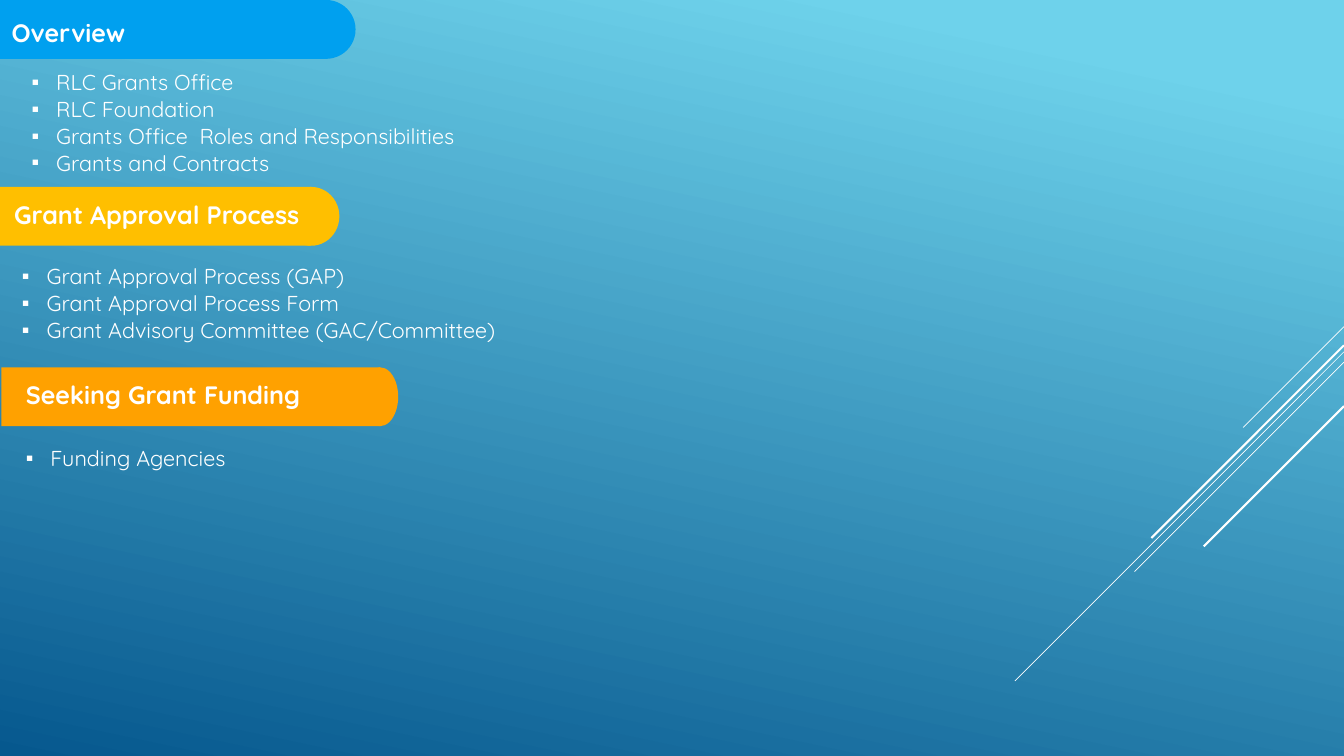
from pptx import Presentation
from pptx.dml.color import RGBColor
from pptx.enum.shapes import MSO_CONNECTOR, MSO_SHAPE
from pptx.enum.text import MSO_ANCHOR, MSO_AUTO_SIZE, PP_ALIGN
from pptx.oxml.xmlchemy import OxmlElement
from pptx.util import Inches, Pt

FONT = "Quicksand"
SLIDE_W, SLIDE_H = 20.79, 11.69
PILL_H = 0.91
COLORS = {
    "sky": "6ED2EB",
    "deep": "06588E",
    "white": "FFFFFF",
    "blue": "00A0EF",
    "yellow": "FFBF00",
    "orange": "FFA100",
}

SECTIONS = [
    {
        "heading": "Overview", "color": "blue",
        "pill": (0, 0, 5.5), "cap": 0.91,
        "heading_box": (0.18, 0.27, 4.2, 0.49),
        "list_box": (0.49, 1.07, 7.4, 1.67),
        "heading_idx": 0, "list_idx": 2,
        "items": ["RLC Grants Office", "RLC Foundation",
                  "Grants Office  Roles and Responsibilities",
                  "Grants and Contracts"],
    },
    {
        "heading": "Grant Approval Process", "color": "yellow",
        "pill": (0, 2.89, 5.25), "cap": 0.87,
        "heading_box": (0.22, 0.2, 5.26, 0.49),
        "list_box": (0.34, 1.18, 18.56, 1.25),
        "heading_idx": 1, "list_idx": 4,
        "items": ["Grant Approval Process (GAP)", "Grant Approval Process Form",
                  "Grant Advisory Committee (GAC/Committee)"],
    },
    {
        "heading": "Seeking Grant Funding", "color": "orange",
        "pill": (0.02, 5.68, 6.14), "cap": 0.56,
        "heading_box": (0.38, 0.19, 10.3, 0.49),
        "list_box": (0.38, 1.2, 3.74, 0.42),
        "heading_idx": 3, "list_idx": None,
        "items": ["Funding Agencies"],
    },
]

STREAKS = [
    (5.05, 19.23, 6.61, 0.75),
    (5.44, 15.7, 10.53, 0.75),
    (5.6, 17.55, 8.84, 0.75),
    (5.34, 17.81, 8.32, 2.25),
    (6.28, 18.62, 8.45, 2.25),
]


def rgb(name):
    return RGBColor.from_string(COLORS[name])


def paint_background(s):
    fill = s.background.fill
    fill.gradient()
    fill.gradient_angle = 258
    for stop, position, color in zip(fill.gradient_stops, (0.1, 1), ("sky", "deep")):
        stop.position = position
        stop.color.rgb = rgb(color)


def add_streaks(s, right):
    for top, x, y, weight in STREAKS:
        line = s.shapes.add_connector(MSO_CONNECTOR.STRAIGHT, Inches(right), Inches(top),
                                      Inches(x), Inches(y))
        line.line.color.rgb = rgb("white")
        line.line.width = Pt(weight)
        line.element.spPr.append(OxmlElement("a:effectLst"))


def add_pill(s, x, y, w, cap, color):
    parts = [(MSO_SHAPE.RECTANGLE, x, w - cap / 2), (MSO_SHAPE.OVAL, x + w - cap, cap)]
    for kind, left, width in parts:
        sp = s.shapes.add_shape(kind, Inches(left), Inches(y), Inches(width), Inches(PILL_H))
        sp.shadow.inherit = False
        sp.fill.solid()
        sp.fill.fore_color.rgb = rgb(color)
        sp.line.fill.background()


def add_bullet(p):
    pPr = p._p.get_or_add_pPr()
    pPr.set("marL", str(Inches(0.38)))
    pPr.set("indent", str(Inches(-0.38)))
    font = OxmlElement("a:buFont")
    font.set("typeface", "Arial")
    char = OxmlElement("a:buChar")
    char.set("char", "▪")
    pPr.extend([font, char])


def place_text(s, idx, box, lines, size, bold=False, bullets=False):
    bounds = [Inches(v) for v in box]
    if idx is None:
        sp = s.shapes.add_textbox(*bounds)
    else:
        sp = next(ph for ph in s.placeholders if ph.placeholder_format.idx == idx)
        sp.left, sp.top, sp.width, sp.height = bounds
        sp.element.getparent().append(sp.element)
    tf = sp.text_frame
    tf.text = "\n".join(lines)
    tf.word_wrap = True
    tf.auto_size = MSO_AUTO_SIZE.NONE
    tf.vertical_anchor = MSO_ANCHOR.TOP
    tf.margin_left = tf.margin_top = tf.margin_right = tf.margin_bottom = 0
    for p in tf.paragraphs:
        p.alignment = PP_ALIGN.LEFT
        p.line_spacing = 1.0
        p.space_before = Pt(1)
        p.space_after = Pt(0)
        if bullets:
            add_bullet(p)
        for r in p.runs:
            r.font.name = FONT
            r.font.size = Pt(size)
            r.font.bold = bold
            r.font.color.rgb = rgb("white")


def add_section(s, section):
    x, y, w = section["pill"]

    def inside(box):
        left, top, width, height = box
        return x + left, y + top, width, height

    add_pill(s, x, y, w, section["cap"], section["color"])
    place_text(s, section["heading_idx"], inside(section["heading_box"]),
               [section["heading"]], 28, bold=True)
    place_text(s, section["list_idx"], inside(section["list_box"]),
               section["items"], 24, bullets=True)


def main():
    prs = Presentation()
    prs.slide_width = Inches(SLIDE_W)
    prs.slide_height = Inches(SLIDE_H)
    s = prs.slides.add_slide(prs.slide_layouts.get_by_name("Comparison"))
    paint_background(s)
    add_streaks(s, SLIDE_W)
    for section in SECTIONS:
        add_section(s, section)
    prs.save("out.pptx")


if __name__ == "__main__":
    main()
